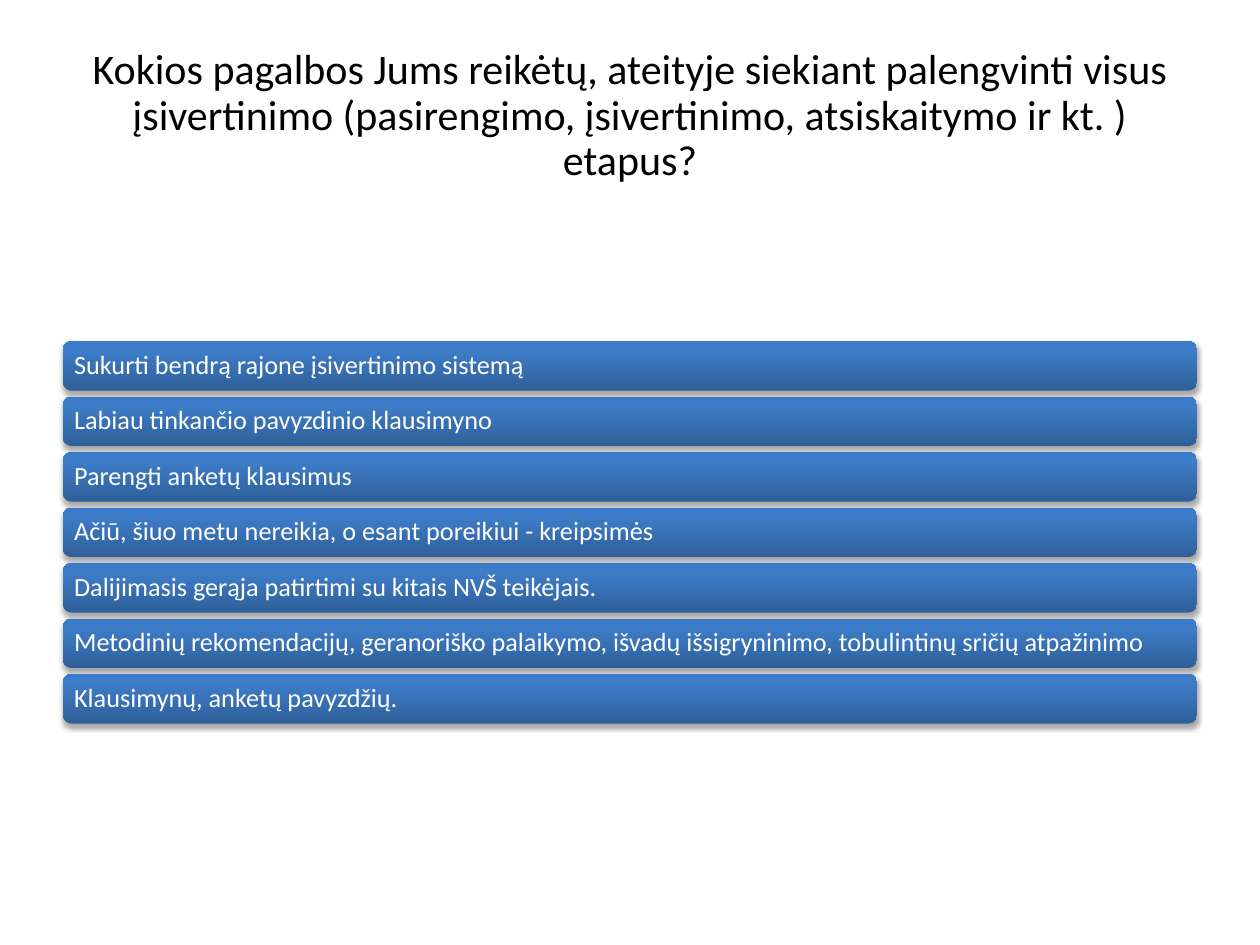
from copy import deepcopy

from lxml.etree import SubElement
from pptx import Presentation
from pptx.dml.color import RGBColor
from pptx.enum.shapes import MSO_SHAPE
from pptx.enum.text import MSO_ANCHOR, MSO_AUTO_SIZE, PP_ALIGN
from pptx.oxml.ns import qn
from pptx.util import Pt

FONT = "Calibri"
QUESTION = ("Kokios pagalbos Jums reikėtų, ateityje siekiant palengvinti visus "
            "įsivertinimo (pasirengimo, įsivertinimo, atsiskaitymo ir kt. ) etapus?")
ANSWERS = [
    "Sukurti bendrą rajone įsivertinimo sistemą",
    "Labiau tinkančio pavyzdinio klausimyno",
    "Parengti anketų klausimus",
    "Ačiū, šiuo metu nereikia, o esant poreikiui - kreipsimės",
    "Dalijimasis gerąja patirtimi su kitais NVŠ teikėjais.",
    "Metodinių rekomendacijų, geranoriško palaikymo, išvadų išsigryninimo, "
    "tobulintinų sričių atpažinimo",
    "Klausimynų, anketų pavyzdžių.",
]
BAR_GRADIENT = [(0, "2F5F99"), (0.8, "3D7CC7"), (1, "3A7CCB")]


def color(value):
    return RGBColor.from_string(value)


def style_text(frame, text, size, text_color, align):
    frame.text = text
    frame.word_wrap = True
    frame.auto_size = MSO_AUTO_SIZE.NONE
    frame.vertical_anchor = MSO_ANCHOR.MIDDLE
    paragraph = frame.paragraphs[0]
    paragraph.alignment = align
    paragraph.line_spacing = 0.9
    paragraph.font.name = FONT
    paragraph.font.size = Pt(size)
    paragraph.font.color.rgb = color(text_color)


def fill_gradient(bar):
    bar.fill.gradient()
    bar.fill.gradient_angle = 90
    # The preset gradient has two stops; add the third
    stop_list = bar._element.spPr.find(qn("a:gradFill")).find(qn("a:gsLst"))
    stop_list.append(deepcopy(stop_list[0]))
    for stop, (position, value) in zip(bar.fill.gradient_stops, BAR_GRADIENT):
        stop.position = position
        stop.color.rgb = color(value)


def add_shadow(bar):
    bar.shadow.inherit = False
    effects = bar._element.spPr.find(qn("a:effectLst"))
    shadow = SubElement(effects, qn("a:outerShdw"), blurRad=str(Pt(3.1)),
                        dist=str(Pt(1.8)), dir="5400000", rotWithShape="0")
    shade = SubElement(shadow, qn("a:srgbClr"), val="000000")
    SubElement(shade, qn("a:alpha"), val="35000")


def place_question(slide, left, top, width, height):
    title = slide.shapes.title
    title.left, title.top = Pt(left), Pt(top)
    title.width, title.height = Pt(width), Pt(height)
    style_text(title.text_frame, QUESTION, 24, "000000", PP_ALIGN.CENTER)


def place_answers(slide, left, top, width, height, gap):
    bar_height = (height - gap * (len(ANSWERS) - 1)) / len(ANSWERS)
    answers = slide.shapes.add_group_shape()
    for row, answer in enumerate(ANSWERS):
        bar = answers.shapes.add_shape(
            MSO_SHAPE.ROUNDED_RECTANGLE, Pt(left),
            Pt(top + row * (bar_height + gap)), Pt(width), Pt(bar_height))
        bar.adjustments[0] = 0.17
        fill_gradient(bar)
        bar.line.fill.background()
        add_shadow(bar)
        frame = bar.text_frame
        frame.margin_left = frame.margin_right = Pt(5)
        frame.margin_top = frame.margin_bottom = Pt(4)
        style_text(frame, answer, 15, "FFFFFF", PP_ALIGN.LEFT)


def main():
    presentation = Presentation()
    presentation.slide_width, presentation.slide_height = Pt(720), Pt(540)
    slide = presentation.slides.add_slide(presentation.slide_layouts[5])
    place_question(slide, 36, 21.6, 648, 90)
    place_answers(slide, 36, 195, 648, 218.5, gap=3.4)
    presentation.save("out.pptx")


if __name__ == "__main__":
    main()
